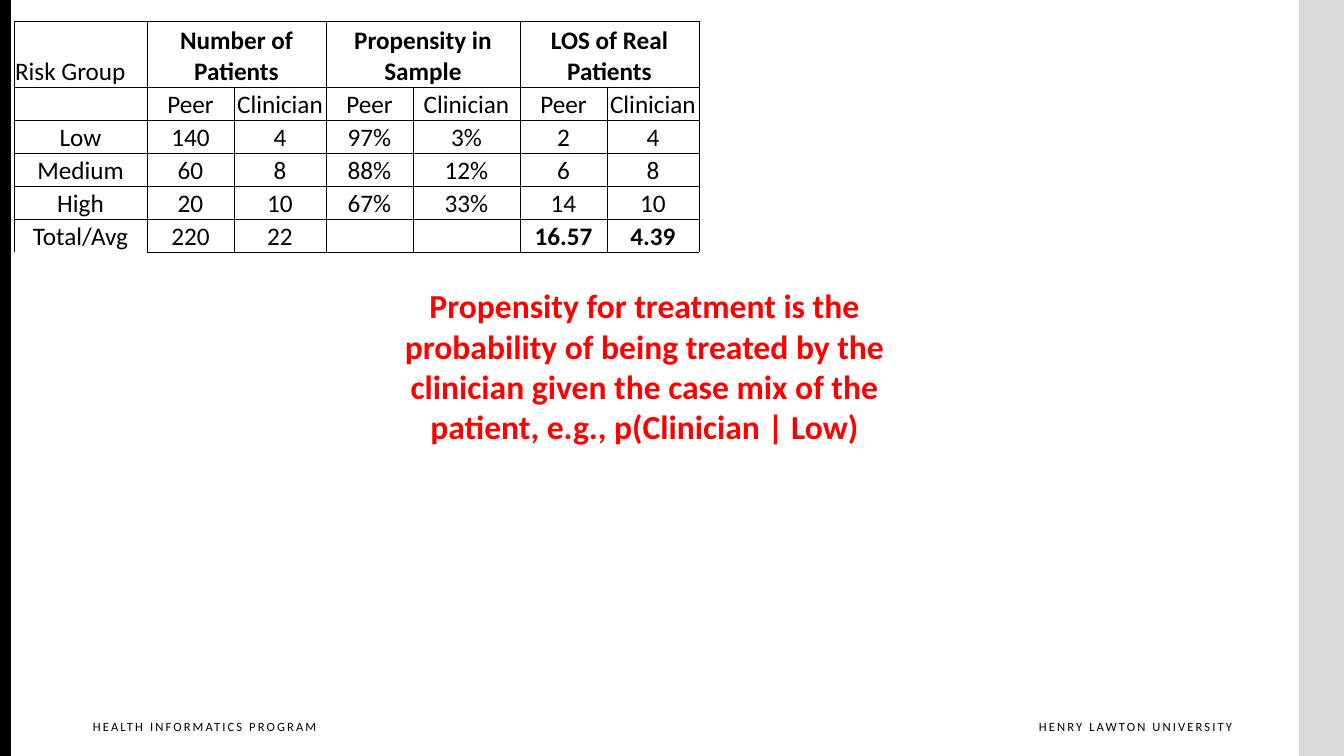
from dataclasses import dataclass

from lxml import etree
from pptx import Presentation
from pptx import util as u
from pptx.dml.color import RGBColor
from pptx.enum import shapes, text
from pptx.oxml import ns


@dataclass(frozen=True)
class Theme:
    font: str = "Calibri"
    ink: str = "000000"
    paper: str = "FFFFFF"
    edge: str = "D9D9D9"
    alert: str = "FF0000"
    small: int = 9
    body: int = 18
    large: int = 24
    rule: float = 0.5
    track: int = 150


LEFT, MID, RIGHT = text.PP_ALIGN.LEFT, text.PP_ALIGN.CENTER, text.PP_ALIGN.RIGHT
SCALE = 12192000 / 1344


def px(n):
    return u.Emu(round(n * SCALE))


def put(item, form):
    for key, val in form.items():
        setattr(item, key, val)


class Page:
    """Draws styled elements on one slide."""

    def __init__(self, deck, theme):
        self.theme = theme
        self.slide = deck.slides.add_slide(deck.slide_layouts[6])

    def prose(self, frame, words, size, color, align=MID, bold=False, track=None):
        para = frame.paragraphs[0]
        para.alignment = align
        run = para.add_run()
        run.text = words
        put(run.font, {"name": self.theme.font, "size": u.Pt(size), "bold": bold})
        run.font.color.rgb = RGBColor.from_string(color)
        if track:
            run._r.get_or_add_rPr().set("spc", str(track))

    def shape(self, kind, box, fill):
        item = self.slide.shapes.add_shape(kind, *map(px, box))
        item.shadow.inherit = False
        item.fill.solid()
        item.fill.fore_color.rgb = RGBColor.from_string(fill)
        item.line.fill.background()
        return item

    def label(self, box, words, align):
        frame = self.slide.shapes.add_textbox(*map(px, box)).text_frame
        put(frame, {"word_wrap": True, "margin_left": px(10), "margin_right": 0,
                    "margin_top": px(5), "margin_bottom": px(5)})
        self.prose(frame, words, self.theme.small, self.theme.ink, align,
                   track=self.theme.track)

    def wave(self, box, words):
        frame = self.shape(shapes.MSO_SHAPE.WAVE, box, self.theme.paper).text_frame
        put(frame, {"word_wrap": True, "vertical_anchor": text.MSO_ANCHOR.MIDDLE})
        self.prose(frame, words, self.theme.large, self.theme.alert, bold=True)

    def border(self, cell, bare=()):
        props = cell._tc.get_or_add_tcPr()
        for side in "LRTB":
            line = etree.SubElement(props, ns.qn(f"a:ln{side}"),
                                    w=str(u.Pt(self.theme.rule)))
            if side in bare:
                etree.SubElement(line, ns.qn("a:noFill"))
            else:
                fill = etree.SubElement(line, ns.qn("a:solidFill"))
                etree.SubElement(fill, ns.qn("a:srgbClr"), val=self.theme.ink)

    def table(self, left, top, cols, rows, data, strong, spans, bare):
        grid = self.slide.shapes.add_table(
            len(rows), len(cols), *map(px, (left, top, sum(cols), sum(rows)))).table
        put(grid, {"first_row": False, "horz_banding": False})
        for col, wide in zip(grid.columns, cols):
            col.width = px(wide)
        for row, high in zip(grid.rows, rows):
            row.height = px(high)
        for r, line in enumerate(data):
            for c, words in enumerate(line):
                cell = grid.cell(r, c)
                put(cell, {"vertical_anchor": text.MSO_ANCHOR.BOTTOM,
                           "margin_left": px(1), "margin_right": px(1),
                           "margin_top": px(1), "margin_bottom": 0})
                self.border(cell, bare.get((r, c), ()))
                cell.fill.background()
                if words:
                    self.prose(cell.text_frame, words, self.theme.body, self.theme.ink,
                               MID if r or c else LEFT, (r, c) in strong)
        for r, c in spans:
            grid.cell(r, c).merge(grid.cell(r, c + 1))


def main():
    deck = Presentation()
    put(deck, {"slide_width": px(1344), "slide_height": px(756)})
    theme = Theme()
    page = Page(deck, theme)
    rect = shapes.MSO_SHAPE.RECTANGLE
    page.shape(rect, (1299, 0, 45, 756), theme.edge)
    page.shape(rect, (0, 0, 11, 756), theme.ink)
    page.label((995, 714, 237, 33), "HENRY LAWTON UNIVERSITY", RIGHT)
    page.label((83, 714, 256, 33), "HEALTH INFORMATICS PROGRAM", LEFT)
    page.wave((357, 280, 575, 172),
              "Propensity for treatment is the probability of being treated by the "
              "clinician given the case mix of the patient, e.g., p(Clinician | Low)")
    data = [
        ["Risk Group", "Number of Patients", "", "Propensity in Sample", "",
         "LOS of Real Patients", ""],
        [""] + ["Peer", "Clinician"] * 3,
        ["Low", "140", "4", "97%", "3%", "2", "4"],
        ["Medium", "60", "8", "88%", "12%", "6", "8"],
        ["High", "20", "10", "67%", "33%", "14", "10"],
        ["Total/Avg", "220", "22", "", "", "16.57", "4.39"],
    ]
    heads = [(0, c) for c in (1, 3, 5)]
    page.table(14, 21, [133, 87, 92, 87, 107, 87, 92], [66] + [33] * 5, data,
               strong=heads + [(5, 5), (5, 6)], spans=heads, bare={(5, 0): "B"})
    deck.save("out.pptx")


if __name__ == "__main__":
    main()
